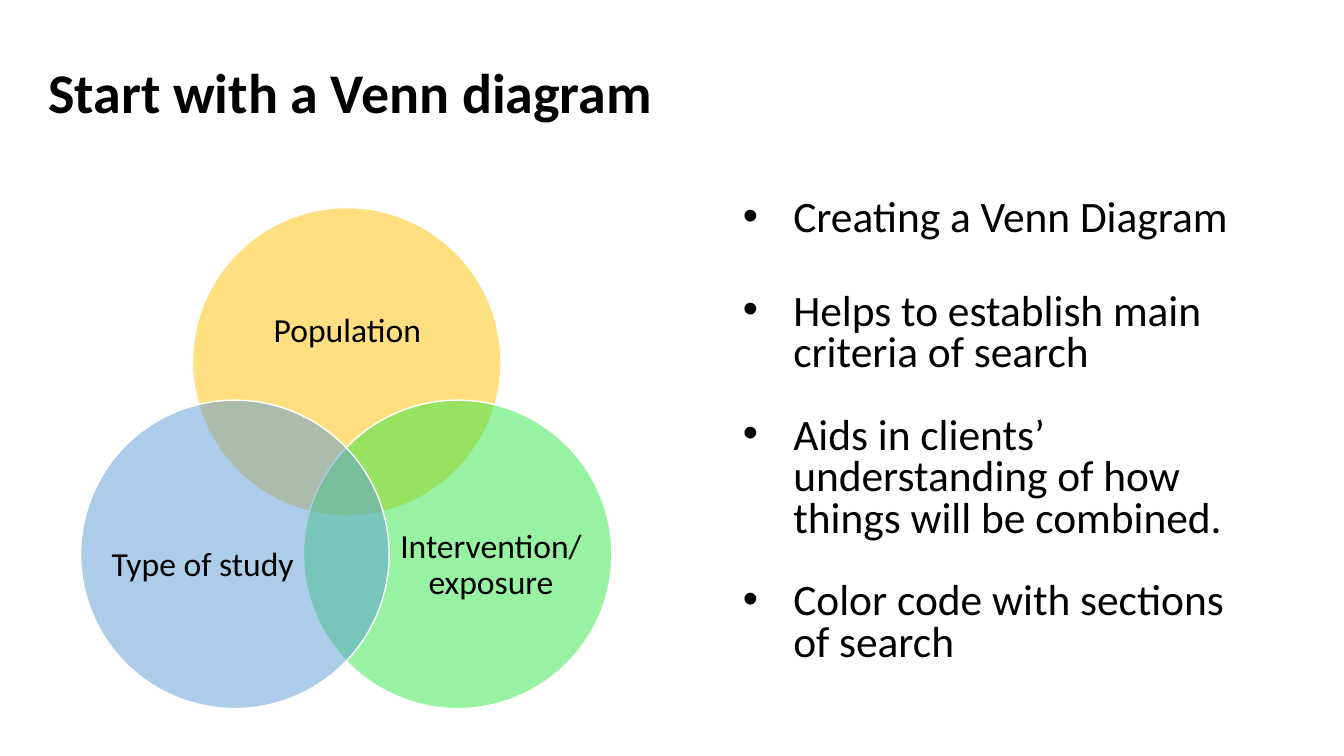
from dataclasses import dataclass

from lxml import etree
from pptx import Presentation
from pptx.dml.color import RGBColor
from pptx.enum.shapes import MSO_SHAPE
from pptx.enum.text import MSO_ANCHOR, PP_ALIGN
from pptx.oxml.ns import qn
from pptx.shapes.group import GroupShape
from pptx.slide import Slide
from pptx.text.text import TextFrame, _Paragraph
from pptx.util import Inches, Pt

OVAL = MSO_SHAPE.OVAL
MIDDLE = MSO_ANCHOR.MIDDLE
CENTER, LEFT = PP_ALIGN.CENTER, PP_ALIGN.LEFT

FONT = "Calibri"
BLACK, WHITE = "000000", "FFFFFF"
DIAMETER = 3.06
LOWER_TOP = 3.97
LOWER_LABEL = (4.77, 1.84, 1.68)


@dataclass(frozen=True)
class Criterion:
    name: str
    color: str
    left: float
    top: float
    label_left: float
    label_top: float
    label_width: float
    label_height: float


@dataclass(frozen=True)
class Point:
    text: str
    gap_after: float


CRITERIA = [
    Criterion("Population", "FFC000", 1.91, 2.06, 2.32, 2.6, 2.25, 1.38),
    Criterion("Intervention/ exposure", "30E845", 3.01, LOWER_TOP, 3.95, *LOWER_LABEL),
    Criterion("Type of study", "5B9BD5", 0.8, LOWER_TOP, 1.09, *LOWER_LABEL),
]
POINTS = [
    Point("Creating a Venn Diagram", 37),
    Point("Helps to establish main criteria of search", 29),
    Point("Aids in clients’ understanding of how things will be combined.", 29),
    Point("Color code with sections of search", 0),
]


def rgb(color: str) -> RGBColor:
    return RGBColor.from_string(color)


def format_paragraph(paragraph: _Paragraph, size: float, spacing: float,
                     align: PP_ALIGN = LEFT, bold: bool = False) -> None:
    paragraph.alignment = align
    paragraph.line_spacing = spacing
    paragraph.space_before = Pt(0)
    for run in paragraph.runs:
        run.font.name = FONT
        run.font.size = Pt(size)
        run.font.bold = bold
        run.font.color.rgb = rgb(BLACK)


def remove_margins(frame: TextFrame) -> None:
    frame.margin_left = frame.margin_right = Inches(0)
    frame.margin_top = frame.margin_bottom = Inches(0)


def add_bullet(paragraph: _Paragraph) -> None:
    """Give the paragraph a hanging round bullet."""
    properties = paragraph._p.get_or_add_pPr()
    properties.set("marL", str(Inches(0.98)))
    properties.set("indent", str(Inches(-0.5)))
    etree.SubElement(properties, qn("a:buFont")).set("typeface", "Arial")
    etree.SubElement(properties, qn("a:buChar")).set("char", "•")


def add_title(slide: Slide) -> None:
    title = slide.shapes.title
    title.left, title.top = Inches(0.38), Inches(0.24)
    title.width, title.height = Inches(6.38), Inches(1.41)
    title.text_frame.text = "Start with a Venn diagram"
    title.text_frame.vertical_anchor = MIDDLE
    format_paragraph(title.text_frame.paragraphs[0], 40, 0.9, bold=True)


def add_criterion(venn: GroupShape, criterion: Criterion) -> None:
    circle = venn.shapes.add_shape(OVAL, Inches(criterion.left), Inches(criterion.top),
                                   Inches(DIAMETER), Inches(DIAMETER))
    circle.shadow.inherit = False
    circle.fill.solid()
    circle.fill.fore_color.rgb = rgb(criterion.color)
    fill_color = circle._element.spPr.find(qn("a:solidFill")).find(qn("a:srgbClr"))
    etree.SubElement(fill_color, qn("a:alpha")).set("val", "50000")
    circle.line.color.rgb = rgb(WHITE)
    circle.line.width = Pt(1)

    label = venn.shapes.add_textbox(
        Inches(criterion.label_left), Inches(criterion.label_top),
        Inches(criterion.label_width), Inches(criterion.label_height)).text_frame
    label.word_wrap = True
    label.vertical_anchor = MIDDLE
    remove_margins(label)
    label.text = criterion.name
    format_paragraph(label.paragraphs[0], 24, 0.9, CENTER)


def add_points(slide: Slide) -> None:
    body = slide.shapes.add_textbox(Inches(6.79), Inches(1.93),
                                    Inches(5.67), Inches(4.76)).text_frame
    body.word_wrap = True
    body.text = "\n".join(point.text for point in POINTS)
    for paragraph, point in zip(body.paragraphs, POINTS):
        format_paragraph(paragraph, 31, 0.8)
        paragraph.space_after = Pt(point.gap_after)
        add_bullet(paragraph)


def main() -> None:
    presentation = Presentation()
    presentation.slide_width, presentation.slide_height = Inches(13.33), Inches(7.5)
    slide = presentation.slides.add_slide(presentation.slide_layouts.get_by_name("Title Only"))
    add_title(slide)
    venn = slide.shapes.add_group_shape()
    for criterion in CRITERIA:
        add_criterion(venn, criterion)
    add_points(slide)
    presentation.save("out.pptx")


if __name__ == "__main__":
    main()
